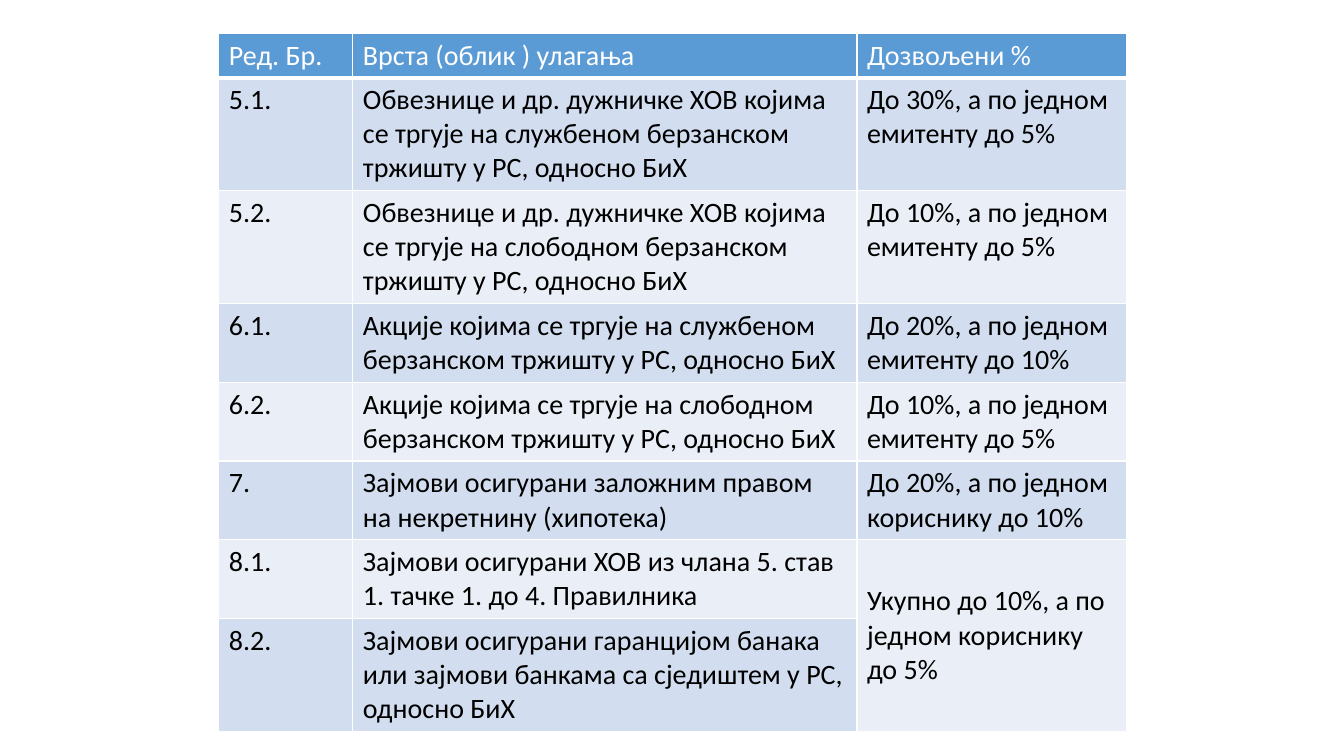
from dataclasses import dataclass

from lxml.etree import SubElement
from pptx import Presentation
from pptx.dml.color import RGBColor
from pptx.enum.text import MSO_ANCHOR
from pptx.oxml.ns import qn
from pptx.util import Inches, Pt


@dataclass(frozen=True)
class Theme:
    font: str = "Calibri"
    size: int = 20
    header_fill: str = "5B9BD5"
    odd_fill: str = "D2DEEF"
    even_fill: str = "EAEFF7"
    header_text: str = "FFFFFF"
    body_text: str = "000000"
    border: str = "FFFFFF"
    border_width: int = 1
    header_rule_width: int = 3


theme = Theme()


def add_border(cell, side, width, position):
    properties = cell._tc.get_or_add_tcPr()
    line = SubElement(properties, qn(f"a:ln{side}"), w=str(Pt(width)))
    fill = SubElement(line, qn("a:solidFill"))
    SubElement(fill, qn("a:srgbClr"), val=theme.border)
    properties.insert(position, line)


investments = [
    ("Ред. Бр.", "Врста (облик ) улагања", "Дозвољени %"),
    ("5.1.", "Обвезнице и др. дужничке ХОВ којима се тргује на службеном берзанском тржишту у РС, односно БиХ",
     "До 30%, а по једном емитенту до 5%"),
    ("5.2.", "Обвезнице и др. дужничке ХОВ којима се тргује на слободном берзанском тржишту у РС, односно БиХ",
     "До 10%, а по једном емитенту до 5%"),
    ("6.1.", "Акције којима се тргује на службеном берзанском тржишту у РС, односно БиХ",
     "До 20%, а по једном емитенту до 10%"),
    ("6.2.", "Акције којима се тргује на слободном берзанском тржишту у РС, односно БиХ",
     "До 10%, а по једном емитенту до 5%"),
    ("7.", "Зајмови осигурани заложним правом на некретнину (хипотека)",
     "До 20%, а по једном кориснику до 10%"),
    ("8.1.", "Зајмови осигурани ХОВ из члана 5. став 1. тачке 1. до 4. Правилника",
     "Укупно до 10%, а по једном кориснику до 5%"),
    ("8.2.", "Зајмови осигурани гаранцијом банака или зајмови банкама са сједиштем у РС, односно БиХ", ""),
]
column_widths = [1.33, 5, 2.67]
row_line_counts = [1, 3, 3, 2, 2, 2, 2, 3]
row_heights = [0.1 + 0.34 * lines for lines in row_line_counts]

presentation = Presentation()
presentation.slide_width = Inches(13.33)
presentation.slide_height = Inches(7.5)
slide = presentation.slides.add_slide(presentation.slide_layouts[6])

table = slide.shapes.add_table(
    len(investments), len(column_widths), Inches(2.17), Inches(0.33),
    Inches(sum(column_widths)), Inches(sum(row_heights)),
).table
for column, width in zip(table.columns, column_widths):
    column.width = Inches(width)
for row, height in zip(table.rows, row_heights):
    row.height = Inches(height)

for row_index, texts in enumerate(investments):
    is_header = row_index == 0
    band_fill = theme.odd_fill if row_index % 2 else theme.even_fill
    for column_index, text in enumerate(texts):
        cell = table.cell(row_index, column_index)
        cell.text = text
        cell.fill.solid()
        cell.fill.fore_color.rgb = RGBColor.from_string(theme.header_fill if is_header else band_fill)
        font = cell.text_frame.paragraphs[0].font
        font.name = theme.font
        font.size = Pt(theme.size)
        font.bold = False
        font.color.rgb = RGBColor.from_string(theme.header_text if is_header else theme.body_text)
        for position, side in enumerate("LRTB"):
            is_header_rule = is_header and side == "B"
            width = theme.header_rule_width if is_header_rule else theme.border_width
            add_border(cell, side, width, position)

shared_limit = table.cell(6, 2)
shared_limit.merge(table.cell(7, 2))
shared_limit.vertical_anchor = MSO_ANCHOR.MIDDLE

presentation.save("out.pptx")
